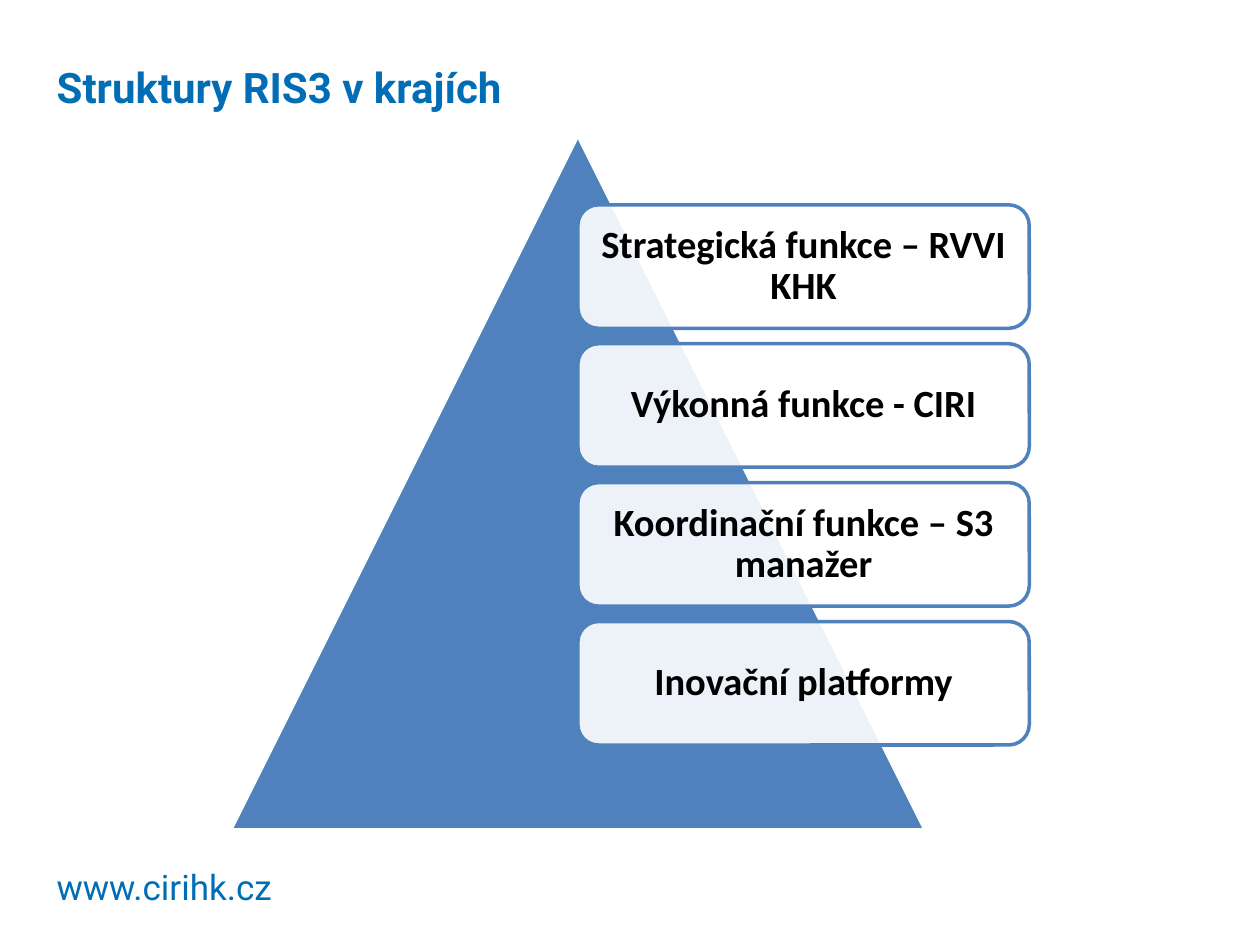
from dataclasses import dataclass

from lxml.etree import SubElement
from pptx import Presentation
from pptx.dml.color import RGBColor
from pptx.enum.shapes import MSO_SHAPE
from pptx.enum.text import MSO_ANCHOR, PP_ALIGN
from pptx.oxml.ns import qn
from pptx.util import Cm, Pt


@dataclass(frozen=True)
class Theme:
    heading_font: str = "Roboto"
    body_font: str = "Calibri"
    brand: RGBColor = RGBColor(0x00, 0x6D, 0xB5)
    pyramid: RGBColor = RGBColor(0x4F, 0x81, 0xBD)
    white: RGBColor = RGBColor(0xFF, 0xFF, 0xFF)
    ink: RGBColor = RGBColor(0x00, 0x00, 0x00)
    title_size: Pt = Pt(24)
    function_size: Pt = Pt(22)
    web_size: Pt = Pt(20)
    outline: Pt = Pt(2)
    box_opacity: int = 90


THEME = Theme()
FUNCTIONS = [
    "Strategická funkce – RVVI KHK",
    "Výkonná funkce - CIRI",
    "Koordinační funkce – S3 manažer",
    "Inovační platformy",
]


def write(frame, text, font, size, color, bold=False, align=PP_ALIGN.LEFT):
    """Put one formatted paragraph into a text frame and return it."""
    frame.text = text
    paragraph = frame.paragraphs[0]
    paragraph.alignment = align
    paragraph.space_before = Pt(0)
    for run in paragraph.runs:
        run.font.name = font
        run.font.size = size
        run.font.bold = bold
        run.font.color.rgb = color
    return paragraph


def add_outlined(slide, preset, bounds, fill, line):
    shape = slide.shapes.add_shape(preset, *map(Cm, bounds))
    shape.shadow.inherit = False
    shape.fill.solid()
    shape.fill.fore_color.rgb = fill
    shape.line.color.rgb = line
    shape.line.width = THEME.outline
    return shape


def set_opacity(shape, percent):
    color = shape.fill._xPr.find(qn("a:solidFill"))[0]
    SubElement(color, qn("a:alpha")).set("val", str(percent * 1000))


def add_function(slide, label, bounds):
    box = add_outlined(slide, MSO_SHAPE.ROUNDED_RECTANGLE, bounds,
                       THEME.white, THEME.pyramid)
    set_opacity(box, THEME.box_opacity)
    frame = box.text_frame
    frame.word_wrap = True
    frame.vertical_anchor = MSO_ANCHOR.MIDDLE
    frame.margin_left = frame.margin_right = Cm(0.23)
    frame.margin_top = frame.margin_bottom = Cm(0.23)
    paragraph = write(frame, label, THEME.body_font, THEME.function_size,
                      THEME.ink, bold=True, align=PP_ALIGN.CENTER)
    paragraph.line_spacing = 0.9


def set_title(slide, text):
    title = slide.shapes.title
    title.left, title.top = Cm(0.89), Cm(1.12)
    title.width, title.height = Cm(19.2), Cm(1.8)
    title.text_frame.vertical_anchor = MSO_ANCHOR.TOP
    write(title.text_frame, text, THEME.heading_font, THEME.title_size,
          THEME.brand, bold=True)


def add_web_address(slide, address):
    box = slide.shapes.add_textbox(Cm(0.89), Cm(17.32), Cm(5.6), Cm(1.11))
    box.text_frame.word_wrap = True
    write(box.text_frame, address, THEME.heading_font, THEME.web_size,
          THEME.brand)


def main():
    deck = Presentation()
    deck.slide_width, deck.slide_height = Cm(25.4), Cm(19.05)
    slide = deck.slides.add_slide(deck.slide_layouts[5])

    # Heading and web address
    set_title(slide, "Struktury RIS3 v krajích")
    add_web_address(slide, "www.cirihk.cz")

    # Pyramid
    add_outlined(slide, MSO_SHAPE.ISOSCELES_TRIANGLE, (4.65, 2.73, 14, 14),
                 THEME.pyramid, THEME.white)

    # Functions stacked over its right half
    left, top, width, height, pitch = 11.65, 4.13, 9.1, 2.49, 2.8
    for level, label in enumerate(FUNCTIONS):
        add_function(slide, label, (left, top + level * pitch, width, height))

    deck.save("out.pptx")


if __name__ == "__main__":
    main()
